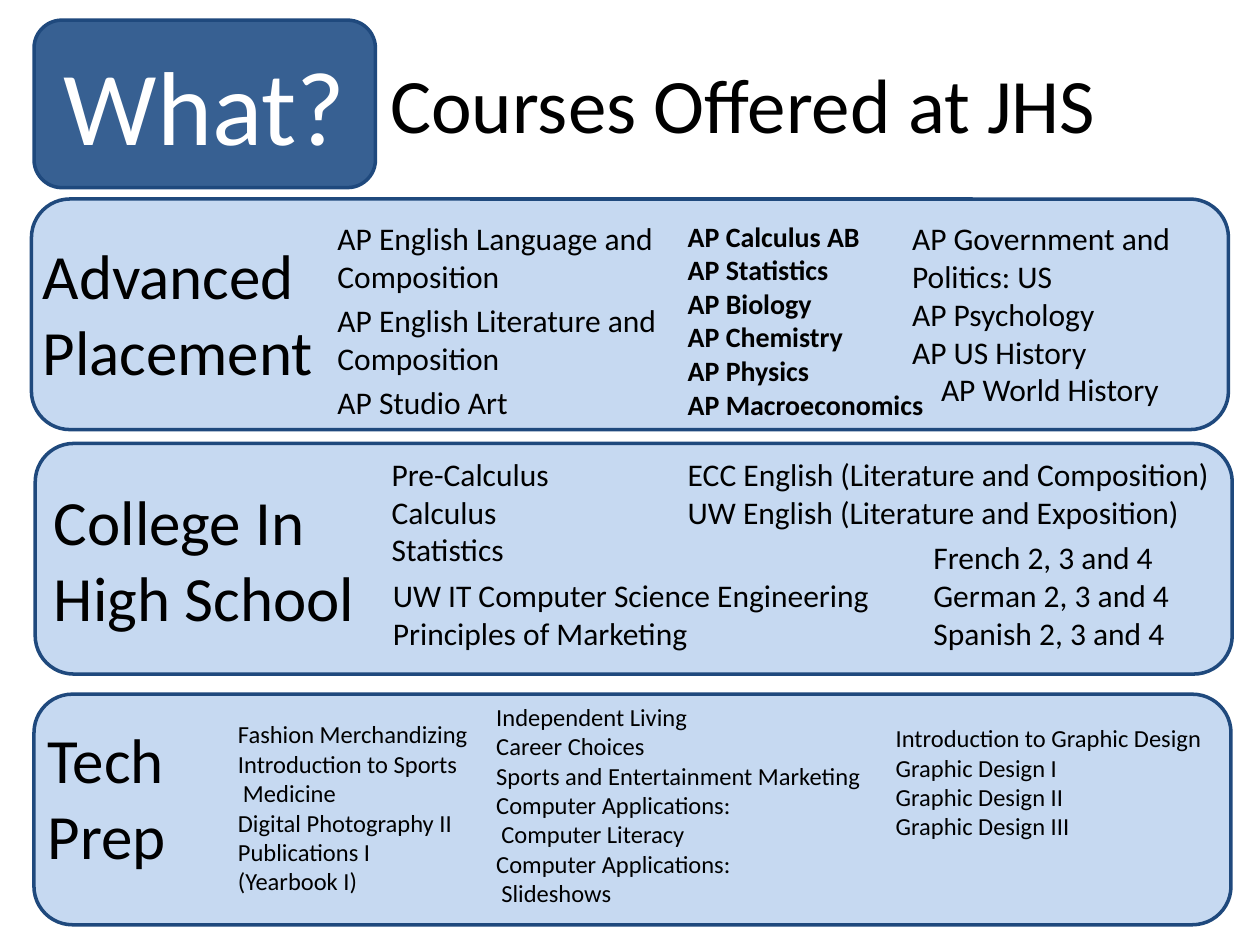
from pptx import Presentation
from pptx.dml.color import RGBColor
from pptx.enum.shapes import MSO_SHAPE as Kind
from pptx.enum.text import MSO_ANCHOR as Anchor, PP_ALIGN as Align
from pptx.util import Inches, Pt

hue = RGBColor.from_string


def write(shape, lines, size, color="000000", bold=False, wrap=True, gap=0):
    """Fill a shape with lines; a line may be a (text, indent) pair."""
    frame = shape.text_frame
    frame.word_wrap = wrap
    for i, line in enumerate(lines):
        text, left = line if isinstance(line, tuple) else (line, 0)
        para = frame.paragraphs[0] if i == 0 else frame.add_paragraph()
        para.space_before = Pt(gap)
        if left:
            para._p.get_or_add_pPr().set("marL", str(Inches(left)))
        run = para.add_run()
        run.text = text
        font = run.font
        font.name, font.size, font.bold = "Calibri", Pt(size), bold
        font.color.rgb = hue(color)


def panel(box, fill):
    """Add a rounded panel with a dark blue edge."""
    shape = slide.shapes.add_shape(Kind.ROUNDED_RECTANGLE, *map(Inches, box))
    shape.shadow.inherit = False
    shape.fill.solid()
    shape.fill.fore_color.rgb = hue(fill)
    shape.line.color.rgb = hue("1F497D")
    shape.line.width = Pt(2)
    return shape


deck = Presentation()
deck.slide_width, deck.slide_height = Inches(10), Inches(7.5)
slide = deck.slides.add_slide(deck.slide_layouts[6])

# Badge and the three section panels
badge = panel((0.27, 0.16, 2.71, 1.33), "376092")
write(badge, ["What?"], 60, "FFFFFF")
badge.text_frame.vertical_anchor = Anchor.MIDDLE
badge.text_frame.paragraphs[0].alignment = Align.CENTER
for left, top in [(0.25, 1.58), (0.28, 3.52), (0.27, 5.51)]:
    panel((left, top, 9.5, 1.83), "C6D9F1")

# Title, section names and course lists: box, size, lines, options
tight = {"wrap": False}
blocks = [
    ((3, 0.4, 6.36, 0.84), 44, ["Courses Offered at JHS"], {}),
    # Advanced Placement
    ((0.24, 1.83, 2.58, 1.31), 36, ["Advanced", "Placement"], {}),
    ((2.58, 1.69, 2.83, 1.57), 18,
     ["AP English Language and Composition",
      "AP English Literature and Composition", "AP Studio Art"],
     {"gap": 3.6}),
    ((5.36, 1.69, 2.19, 1.83), 16,
     ["AP Calculus AB", "AP Statistics", "AP Biology", "AP Chemistry",
      "AP Physics", "AP Macroeconomics"], {"bold": True, "wrap": False}),
    ((7.14, 1.69, 2.38, 1.61), 18,
     ["AP Government and Politics: US", "AP Psychology", "AP US History",
      ("AP World History", 0.23)], {}),
    # College In High School
    ((0.33, 3.78, 2.6, 1.31), 36, ["College In High School"], {}),
    ((3.01, 3.56, 1.46, 1.01), 18,
     ["Pre-Calculus", "Calculus", "Statistics"], tight),
    ((3.02, 4.52, 4.03, 0.71), 18,
     ["UW IT Computer Science Engineering", "Principles of Marketing"], tight),
    ((5.36, 3.56, 4.39, 0.71), 18,
     ["ECC English (Literature and Composition)",
      "UW English (Literature and Exposition)"], tight),
    ((7.31, 4.22, 2.26, 1.01), 18,
     [f"{name} 2, 3 and 4" for name in ("French", "German", "Spanish")], {}),
    # Tech Prep
    ((0.28, 5.67, 1.42, 1.31), 36, ["Tech", "Prep"], {}),
    ((1.79, 5.66, 2.06, 1.51), 14,
     ["Fashion Merchandizing", "Introduction to Sports", ("Medicine", 0.04),
      "Digital Photography II", "Publications I (Yearbook I)"], {}),
    ((3.84, 5.52, 3.83, 1.99), 14,
     ["Independent Living", "Career Choices",
      "Sports and Entertainment Marketing", "Computer Applications:",
      ("Computer Literacy", 0.04), "Computer Applications:",
      ("Slideshows", 0.04)], {}),
    ((7.01, 5.69, 2.65, 1.04), 14,
     ["Introduction to Graphic Design", "Graphic Design I",
      "Graphic Design II", "Graphic Design III"], tight),
]
for box, size, lines, style in blocks:
    write(slide.shapes.add_textbox(*map(Inches, box)), lines, size, **style)

deck.save("out.pptx")
